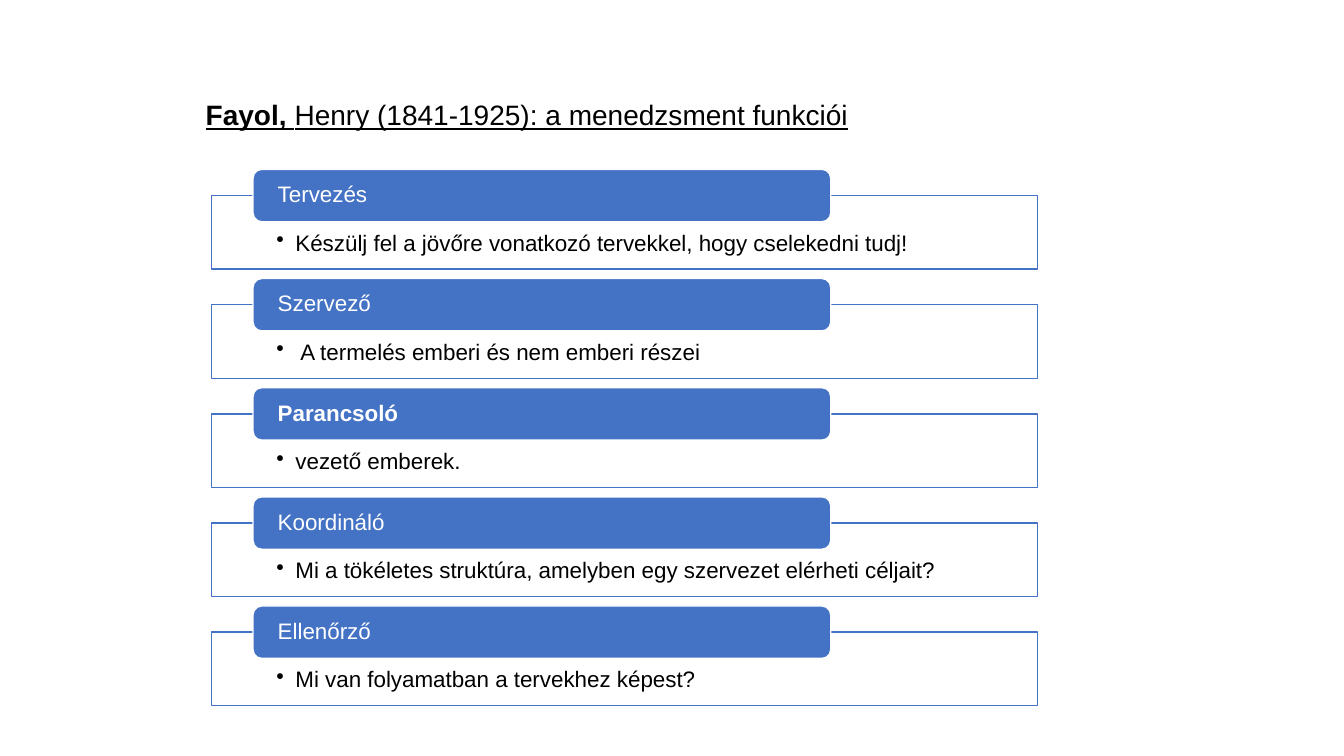
from lxml import etree
from pptx import Presentation
from pptx.dml.color import RGBColor
from pptx.enum.shapes import MSO_SHAPE
from pptx.enum.text import MSO_ANCHOR, PP_ALIGN
from pptx.oxml.ns import qn
from pptx.util import Inches, Pt

RECTANGLE, ROUNDED = MSO_SHAPE.RECTANGLE, MSO_SHAPE.ROUNDED_RECTANGLE
TOP, MIDDLE, LEFT = MSO_ANCHOR.TOP, MSO_ANCHOR.MIDDLE, PP_ALIGN.LEFT

BLUE, WHITE, BLACK = "4472C4", "FFFFFF", "000000"
FUNCTIONS = [
    ("Tervezés", "Készülj fel a jövőre vonatkozó tervekkel, hogy cselekedni tudj!"),
    ("Szervező", " A termelés emberi és nem emberi részei"),
    ("Parancsoló", "vezető emberek."),
    ("Koordináló", "Mi a tökéletes struktúra, amelyben egy szervezet elérheti céljait?"),
    ("Ellenőrző", "Mi van folyamatban a tervekhez képest?"),
]
EMPHASISED = "Parancsoló"
FIRST_TOP, ROW_PITCH = 1.68, 1.083
FRAME_DROP = 0.26  # from the top of a heading to the top of its frame


def write(shape, *runs, size=16, color=BLACK, underline=None, anchor=TOP,
          insets=(0.1, 0.05, 0.1, 0.05), spacing=0.9, bullet=None):
    """Fill a shape with one paragraph made of (text, bold) runs."""
    frame = shape.text_frame
    frame.word_wrap = True
    frame.vertical_anchor = anchor
    (frame.margin_left, frame.margin_top,
     frame.margin_right, frame.margin_bottom) = map(Inches, insets)
    paragraph = frame.paragraphs[0]
    paragraph.alignment = LEFT
    paragraph.line_spacing = spacing
    if bullet:
        paragraph.level = 1
        properties = paragraph._p.get_or_add_pPr()
        properties.set("marL", str(Inches(0.19)))
        properties.set("indent", str(-Inches(0.19)))
        etree.SubElement(properties, qn("a:buChar"), char=bullet)
    for text, bold in runs:
        run = paragraph.add_run()
        run.text = text
        run.font.name = "Arial"
        run.font.size = Pt(size)
        run.font.bold = bold
        run.font.underline = underline
        run.font.color.rgb = RGBColor.from_string(color)


def add_box(kind, left, top, width, height, fill, line):
    box = slide.shapes.add_shape(kind, *map(Inches, (left, top, width, height)))
    box.shadow.inherit = False
    box.fill.solid()
    box.fill.fore_color.rgb = RGBColor.from_string(fill)
    box.line.color.rgb = RGBColor.from_string(line)
    box.line.width = Pt(1)
    return box


deck = Presentation()
deck.slide_width, deck.slide_height = Inches(13.33), Inches(7.5)
slide = deck.slides.add_slide(deck.slide_layouts[5])

title = slide.shapes.title
title.left, title.top, title.width, title.height = map(Inches, (1.94, 0.92, 9.8, 0.44))
write(title, ("Fayol, ", True), ("Henry (1841-1925): a menedzsment funkciói", False),
      size=20, underline=True, spacing=1.0)

for row, (function, meaning) in enumerate(FUNCTIONS):
    top = FIRST_TOP + row * ROW_PITCH
    frame = add_box(RECTANGLE, 2.1, top + FRAME_DROP, 8.19, 0.73, WHITE, BLUE)
    fill_color = frame.fill._xPr.find(qn("a:solidFill"))[0]
    etree.SubElement(fill_color, qn("a:alpha"), val="90000")
    write(frame, (meaning, False), insets=(0.64, 0.36, 0.64, 0.12), bullet="•")

    heading = add_box(ROUNDED, 2.51, top, 5.73, 0.52, BLUE, WHITE)
    write(heading, (function, function == EMPHASISED), color=WHITE,
          anchor=MIDDLE, insets=(0.22, 0, 0.22, 0))

deck.save("out.pptx")
